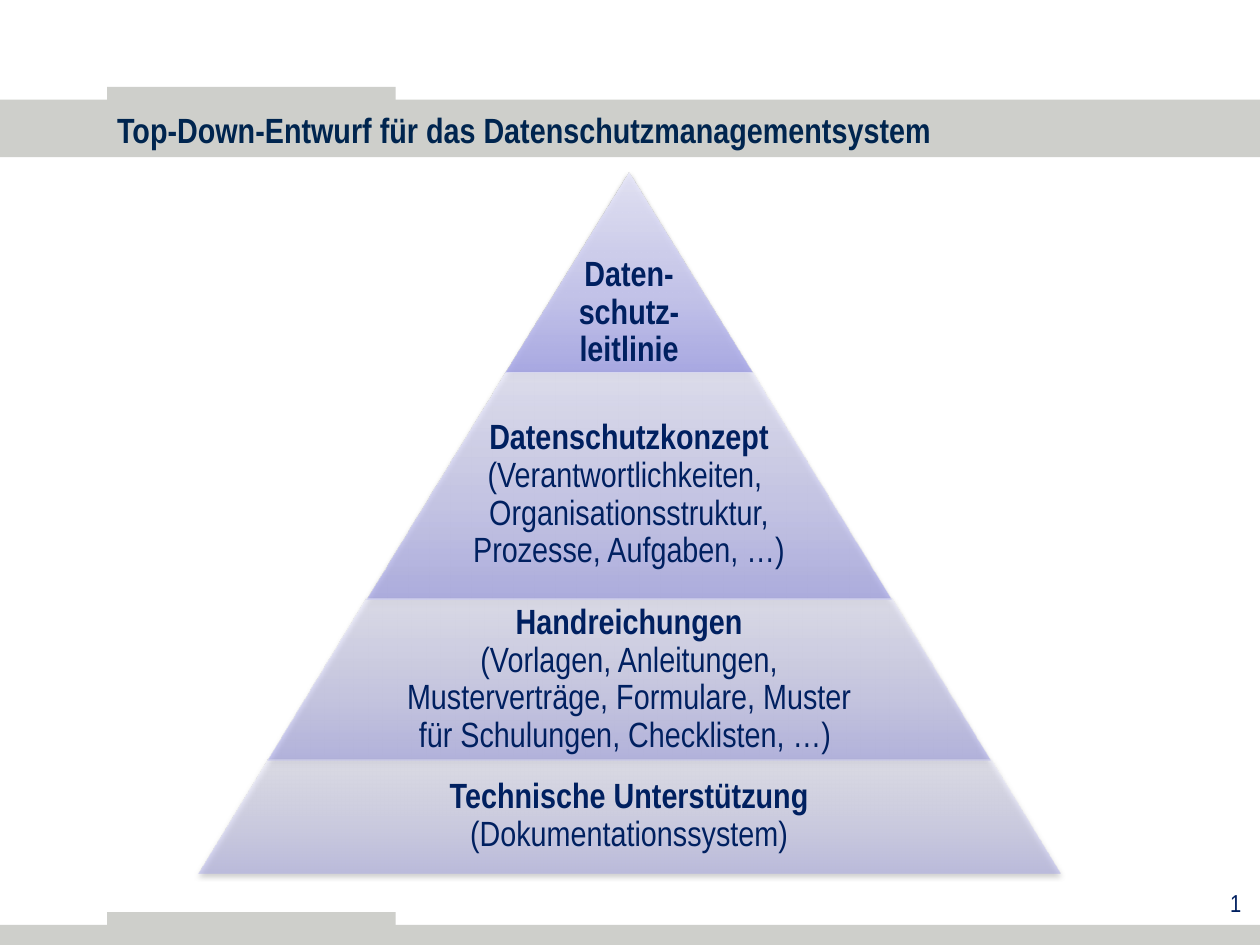
from lxml.etree import SubElement
from pptx import Presentation
from pptx.dml.color import RGBColor
from pptx.enum.shapes import MSO_SHAPE
from pptx.enum.text import MSO_ANCHOR, PP_ALIGN
from pptx.oxml.ns import qn
from pptx.util import Pt

FONT = "Arial Narrow"
BAR = "CECFCB"
TITLE = "00254F"
NAVY = "002060"
GRADIENT = [(0, "A9A9E9"), (35, "C4C4EF"), (100, "E8E8FA")]
SLOPE = 0.615

TIERS = [
    dict(height=114.5, opacity=90, text_share=1, anchor=MSO_ANCHOR.BOTTOM, top_inset=2,
         lines=[("Daten-", True), ("schutz-", True), ("leitlinie", True)]),
    dict(height=129.3, opacity=77, text_share=0.65, anchor=MSO_ANCHOR.MIDDLE, top_inset=12,
         lines=[("Datenschutzkonzept", True), ("(Verantwortlichkeiten, ", False),
                ("Organisationsstruktur, Prozesse, Aufgaben, …)", False)]),
    dict(height=91.8, opacity=63, text_share=0.65, anchor=MSO_ANCHOR.MIDDLE, top_inset=2,
         lines=[("Handreichungen", True),
                ("(Vorlagen, Anleitungen, Musterverträge, Formulare, Muster "
                 "für Schulungen, Checklisten, …) ", False)]),
    dict(height=64.8, opacity=50, text_share=0.65, anchor=MSO_ANCHOR.MIDDLE, top_inset=2,
         lines=[("Technische Unterstützung", True), ("(Dokumentationssystem)", False)]),
]


def color(value):
    return RGBColor.from_string(value)


def add_text(slide, box, lines, size=20, fill=NAVY, align=PP_ALIGN.CENTER,
             anchor=MSO_ANCHOR.MIDDLE, insets=(7.2, 3.6, 7.2, 3.6), spacing=1):
    shape = slide.shapes.add_textbox(*map(Pt, box))
    frame = shape.text_frame
    frame.word_wrap = True
    frame.vertical_anchor = anchor
    (frame.margin_left, frame.margin_top,
     frame.margin_right, frame.margin_bottom) = map(Pt, insets)
    paragraph = frame.paragraphs[0]
    paragraph.alignment = align
    paragraph.line_spacing = spacing
    paragraph.font.size = Pt(size)
    for index, (text, bold) in enumerate(lines):
        if index:
            paragraph.add_line_break()
        run = paragraph.add_run()
        run.text = text
        run.font.name = FONT
        run.font.size = Pt(size)
        run.font.bold = bold
        run.font.color.rgb = color(fill)


def add_bar(slide, box):
    shape = slide.shapes.add_shape(MSO_SHAPE.RECTANGLE, *map(Pt, box))
    shape.shadow.inherit = False
    shape.fill.solid()
    shape.fill.fore_color.rgb = color(BAR)
    shape.line.fill.background()


def add_band(slide, left, top, width, height):
    add_bar(slide, (left, top, width, height))
    add_bar(slide, (61.2, top - 7.2, 164.9, 9.4))


def add_xml_color(parent, value, opacity):
    element = SubElement(parent, qn("a:srgbClr"), val=value)
    SubElement(element, qn("a:alpha"), val=str(opacity * 1000))


def set_gradient(shape, opacity):
    shape.fill.gradient()
    gradient = shape.element.spPr.find(qn("a:gradFill"))
    for child in list(gradient):
        gradient.remove(child)
    stops = SubElement(gradient, qn("a:gsLst"))
    for position, value in GRADIENT:
        stop = SubElement(stops, qn("a:gs"), pos=str(position * 1000))
        add_xml_color(stop, value, opacity)
    SubElement(gradient, qn("a:lin"), ang="16200000", scaled="0")


def set_shadow(shape):
    shape.shadow.inherit = False
    effects = shape.element.spPr.find(qn("a:effectLst"))
    shadow = SubElement(effects, qn("a:outerShdw"), blurRad=str(Pt(3.1)),
                        dist=str(Pt(1.6)), dir="5400000", rotWithShape="0")
    add_xml_color(shadow, "000000", 38)


def add_tier(slide, box, opacity, text_share, anchor, top_inset, lines):
    left, top, width, height = box
    shape = slide.shapes.add_shape(MSO_SHAPE.TRAPEZOID, *map(Pt, box))
    shape.adjustments[0] = SLOPE
    shape.line.fill.background()
    set_gradient(shape, opacity)
    set_shadow(shape)
    text_width = width * text_share
    text_box = (left + (width - text_width) / 2, top, text_width, height)
    add_text(slide, text_box, lines, anchor=anchor, spacing=0.9,
             insets=(2, top_inset, 2, 2))


def add_pyramid(slide, center, top):
    depth = 0
    for tier in TIERS:
        details = dict(tier)
        height = details.pop("height")
        tier_top = top + depth
        depth += height
        half = SLOPE * depth
        add_tier(slide, (center - half, tier_top, 2 * half, height), **details)


def main():
    presentation = Presentation()
    presentation.slide_width = Pt(720)
    presentation.slide_height = Pt(540)
    slide = presentation.slides.add_slide(presentation.slide_layouts[6])
    add_band(slide, 0, 56.9, 720, 33)
    add_band(slide, 0, 528.5, 720, 11.5)
    add_text(slide, (59.8, 59, 626.4, 30.2),
             [("Top-Down-Entwurf für das Datenschutzmanagementsystem", True)],
             fill=TITLE, align=PP_ALIGN.LEFT)
    add_pyramid(slide, 359.5, 98.6)
    add_text(slide, (556.6, 504, 159.8, 31), [("1", False)], size=14,
             align=PP_ALIGN.RIGHT, anchor=MSO_ANCHOR.TOP)
    presentation.save("out.pptx")


if __name__ == "__main__":
    main()
